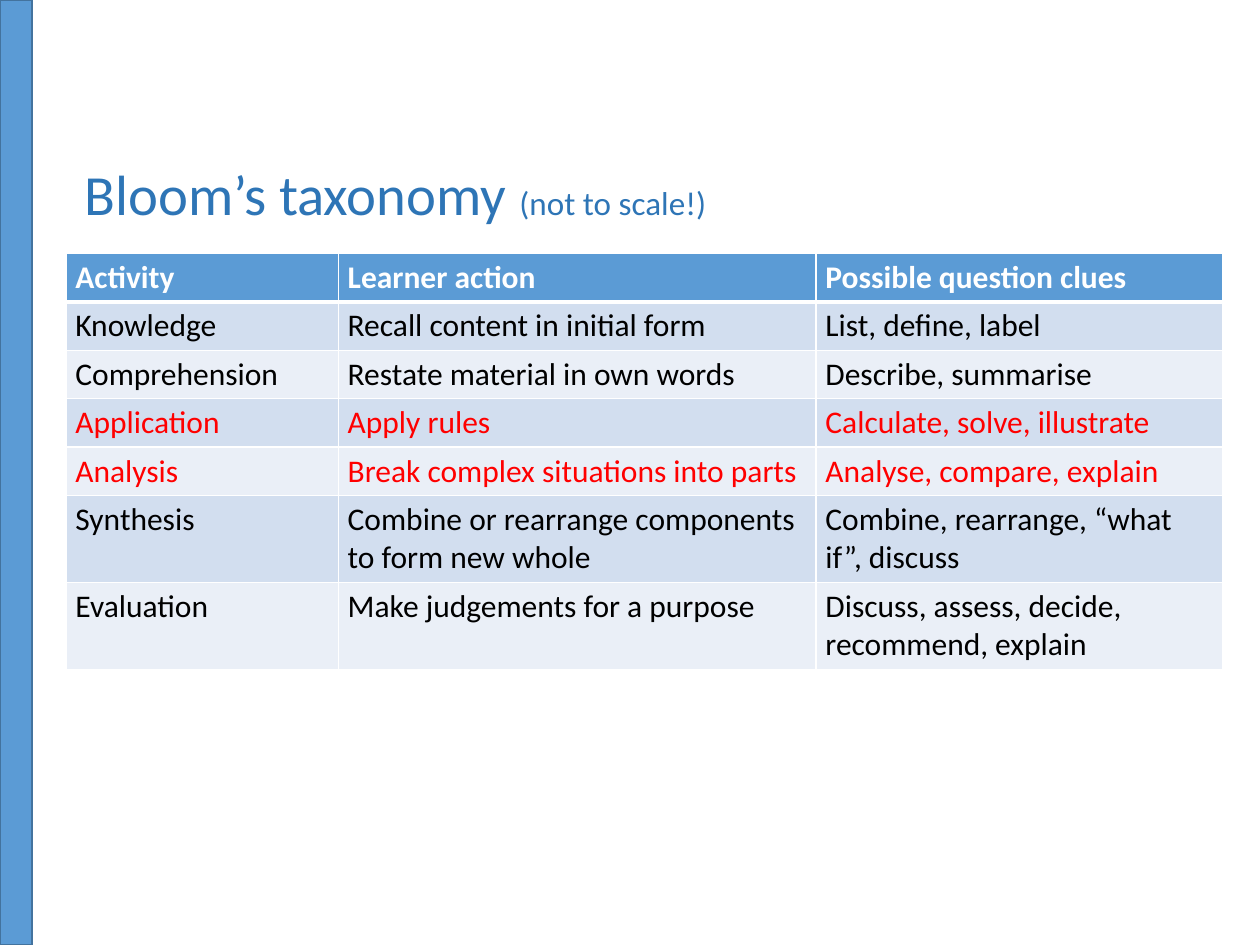
from dataclasses import dataclass

from lxml.etree import SubElement
from pptx import Presentation
from pptx.dml.color import RGBColor
from pptx.enum.shapes import MSO_SHAPE
from pptx.enum.text import MSO_ANCHOR, PP_ALIGN
from pptx.oxml.ns import qn
from pptx.util import Cm, Pt

FONT = "Calibri"
WHITE = RGBColor(0xFF, 0xFF, 0xFF)
BLACK = RGBColor(0x00, 0x00, 0x00)
RED = RGBColor(0xFF, 0x00, 0x00)
BLUE = RGBColor(0x5B, 0x9B, 0xD5)
BAR_EDGE = RGBColor(0x43, 0x73, 0x9E)
TITLE_BLUE = RGBColor(0x2E, 0x75, 0xB6)
BANDS = (RGBColor(0xD2, 0xDE, 0xEF), RGBColor(0xEA, 0xEF, 0xF7))

COLUMN_WIDTHS = (5.49, 9.63, 8.2)
SINGLE_LINE, DOUBLE_LINE = 0.97, 1.73
THIN, THICK = 1, 3


@dataclass
class Level:
    activity: str
    action: str
    clues: str
    color: RGBColor = BLACK
    height: float = SINGLE_LINE


HEADER = Level("Activity", "Learner action", "Possible question clues", WHITE)
LEVELS = [
    Level("Knowledge", "Recall content in initial form", "List, define, label"),
    Level("Comprehension", "Restate material in own words", "Describe, summarise"),
    Level("Application", "Apply rules", "Calculate, solve, illustrate", RED),
    Level("Analysis", "Break complex situations into parts",
          "Analyse, compare, explain", RED),
    Level("Synthesis", "Combine or rearrange components to form new whole",
          "Combine, rearrange, “what if”, discuss", height=DOUBLE_LINE),
    Level("Evaluation", "Make judgements for a purpose",
          "Discuss, assess, decide, recommend, explain", height=DOUBLE_LINE),
]


def add_side_bar(page, height: int) -> None:
    bar = page.shapes.add_shape(MSO_SHAPE.RECTANGLE, 0, 0, Cm(0.64), height)
    bar.shadow.inherit = False
    bar.fill.solid()
    bar.fill.fore_color.rgb = BLUE
    bar.line.color.rgb = BAR_EDGE
    bar.line.width = Pt(1)


def format_title(title) -> None:
    title.left, title.top, title.width, title.height = (
        Cm(1.45), Cm(3.15), Cm(22.2), Cm(1.63))
    frame = title.text_frame
    frame.word_wrap = True
    frame.vertical_anchor = MSO_ANCHOR.MIDDLE
    para = frame.paragraphs[0]
    para.alignment = PP_ALIGN.LEFT
    para.line_spacing = 0.9
    for text, size in (("Bloom’s taxonomy ", 32.4), ("(not to scale!)", 18.9)):
        span = para.add_run()
        span.text = text
        span.font.name = FONT
        span.font.size = Pt(size)
        span.font.color.rgb = TITLE_BLUE


def set_borders(cell, top: int, bottom: int) -> None:
    properties = cell._tc.get_or_add_tcPr()
    for side, width in (("L", THIN), ("R", THIN), ("T", top), ("B", bottom)):
        line = SubElement(properties, qn(f"a:ln{side}"), w=str(Pt(width)))
        fill = SubElement(line, qn("a:solidFill"))
        SubElement(fill, qn("a:srgbClr"), val=str(WHITE))


def fill_row(table, index: int, level: Level) -> None:
    is_header = index == 0
    table.rows[index].height = Cm(level.height)
    for column, text in enumerate((level.activity, level.action, level.clues)):
        cell = table.cell(index, column)
        set_borders(cell, THICK if index == 1 else THIN,
                    THICK if is_header else THIN)
        cell.fill.solid()
        cell.fill.fore_color.rgb = BLUE if is_header else BANDS[(index - 1) % 2]
        cell.margin_left = cell.margin_right = Cm(0.19)
        cell.margin_top = cell.margin_bottom = Cm(0.1)
        cell.text_frame.text = text
        font = cell.text_frame.paragraphs[0].runs[0].font
        font.name = FONT
        font.size = Pt(18)
        font.bold = is_header
        font.color.rgb = level.color


def add_taxonomy_table(page) -> None:
    rows = [HEADER, *LEVELS]
    table = page.shapes.add_table(
        len(rows), len(COLUMN_WIDTHS), Cm(1.33), Cm(5.11),
        Cm(sum(COLUMN_WIDTHS)), Cm(sum(row.height for row in rows))).table
    for column, width in zip(table.columns, COLUMN_WIDTHS):
        column.width = Cm(width)
    for index, level in enumerate(rows):
        fill_row(table, index, level)


def main() -> None:
    deck = Presentation()
    deck.slide_width, deck.slide_height = Cm(25.4), Cm(19.05)
    page = deck.slides.add_slide(deck.slide_layouts[5])

    # Blue bar down the left edge
    add_side_bar(page, deck.slide_height)

    # Title with a smaller remark
    format_title(page.shapes.title)

    # Taxonomy levels
    add_taxonomy_table(page)

    deck.save("out.pptx")


if __name__ == "__main__":
    main()
